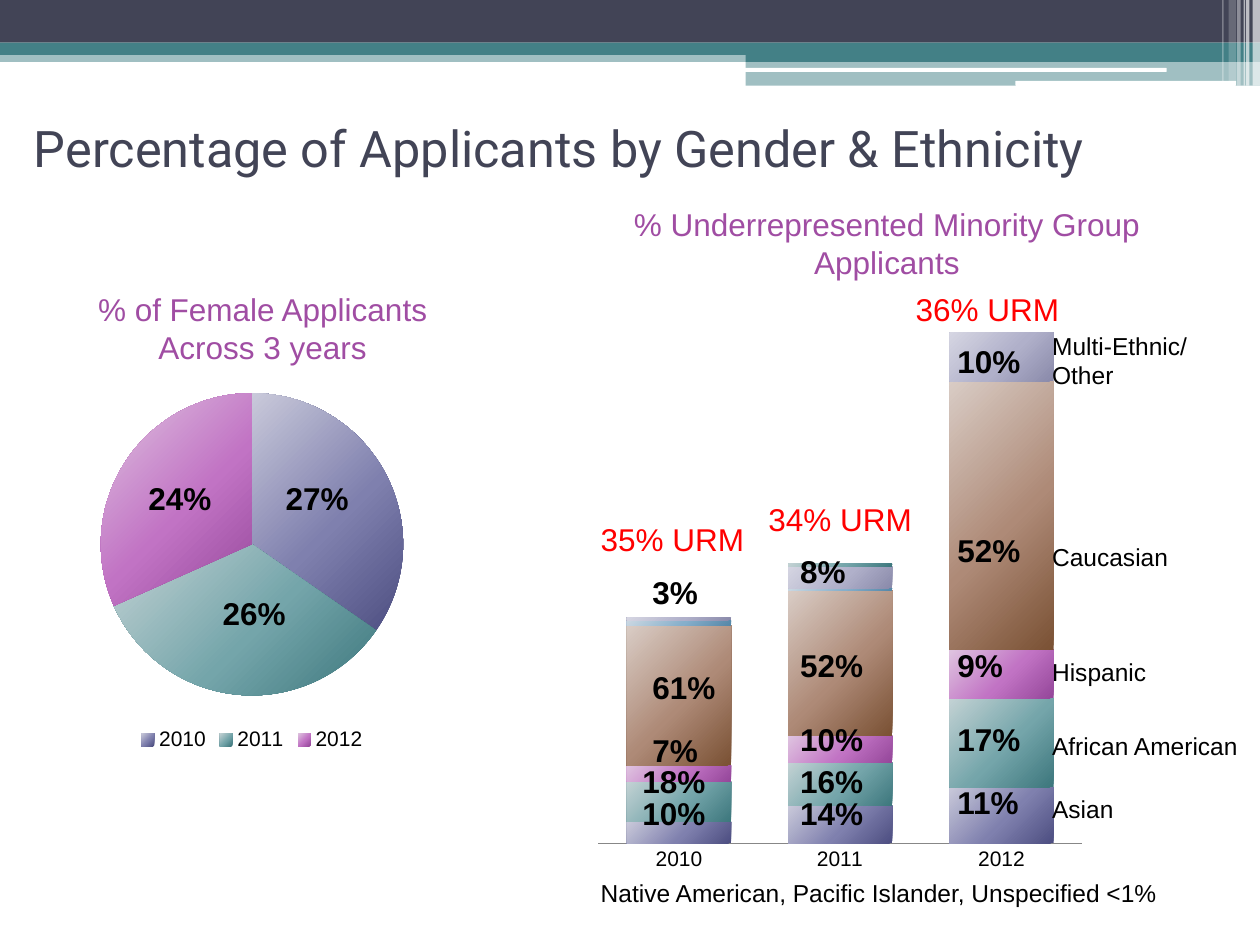
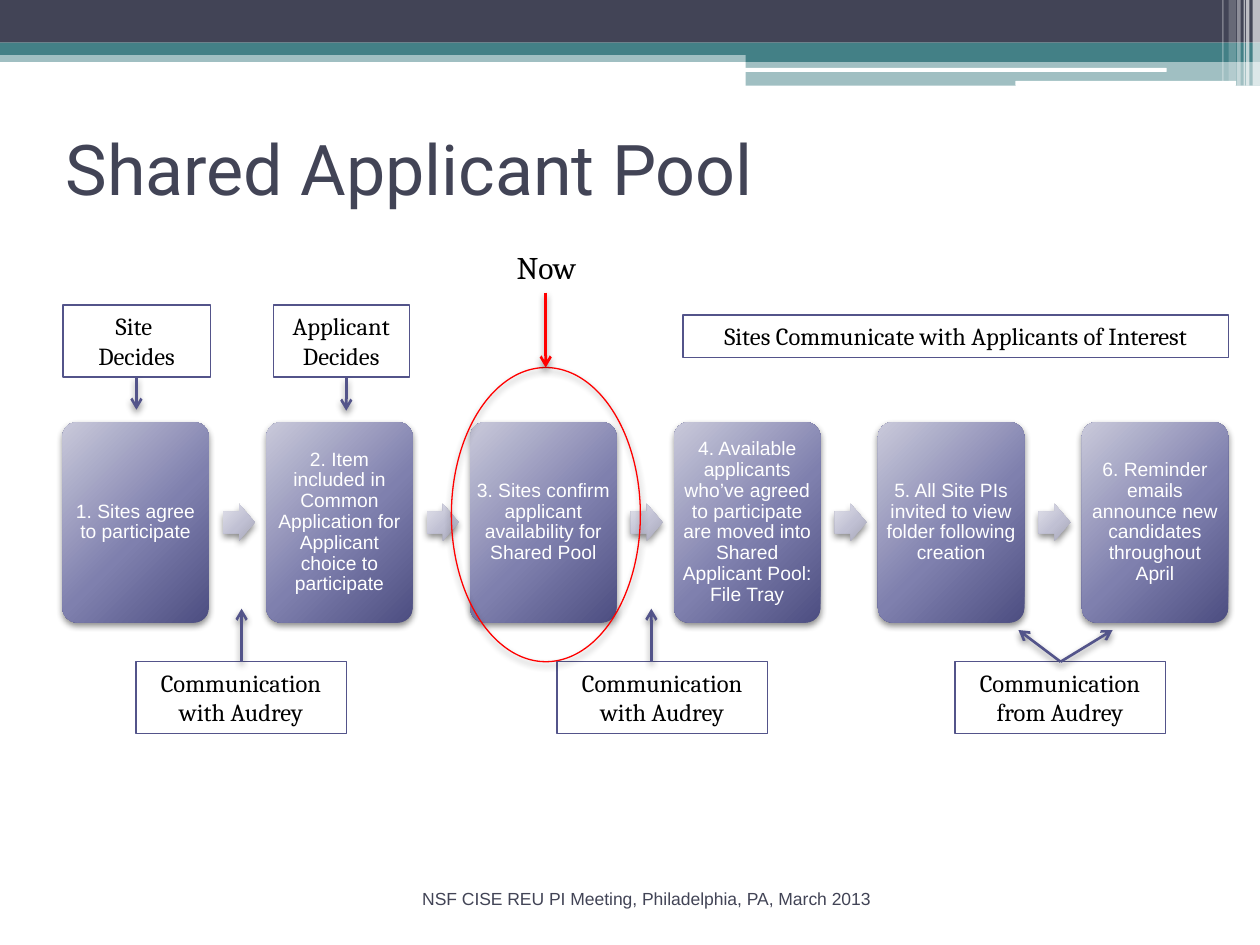
from lxml.etree import SubElement
from pptx import Presentation
from pptx.chart.data import CategoryChartData
from pptx.dml.color import RGBColor
from pptx.enum.chart import XL_CHART_TYPE, XL_LEGEND_POSITION, XL_TICK_LABEL_POSITION, XL_TICK_MARK
from pptx.enum.shapes import MSO_CONNECTOR, MSO_SHAPE
from pptx.enum.text import MSO_ANCHOR, PP_ALIGN
from pptx.oxml import parse_xml
from pptx.oxml.ns import nsdecls, qn
from pptx.util import Cm, Pt

WHITE = RGBColor(0xFF, 0xFF, 0xFF)
BLACK = RGBColor(0x00, 0x00, 0x00)
RED = RGBColor(0xFF, 0x00, 0x00)
GRAY = RGBColor(0x87, 0x87, 0x87)
SLATE = RGBColor(0x42, 0x44, 0x56)
TEAL = RGBColor(0x43, 0x80, 0x86)
INDIGO = RGBColor(0x53, 0x54, 0x8A)
PURPLE = RGBColor(0xA0, 0x4D, 0xA3)

# Gradient stops from light through middle to dark
INDIGO_GRADIENT = ("C9C9DA", "7F80AE", "4D4E81")
PALE_INDIGO_GRADIENT = ("D5D5E2", "B0B0CA", "8A8AAA")
TEAL_GRADIENT = ("C3D2D4", "74A5AA", "3D777D")
PURPLE_GRADIENT = ("DFC4E0", "C173C4", "95479A")
ORANGE_GRADIENT = ("E8CDC0", "DA8F68", "B75D28")
BROWN_GRADIENT = ("D9CCC5", "AE8A77", "7A5134")
BLUE_GRADIENT = ("CBD8E2", "86AFCB", "5587A8")
ARROW_GRADIENT = ("E1E1EA", "C0C0D3", "A7A7B7")

SHADOW = (
    f'<a:effectLst {nsdecls("a")}><a:outerShdw blurRad="50800" dist="25400" dir="5400000" rotWithShape="0">'
    '<a:srgbClr val="000000"><a:alpha val="45000"/></a:srgbClr></a:outerShdw></a:effectLst>'
)


def write_text(shape, text, *, size, font="Arial", color=BLACK, bold=False, align=PP_ALIGN.LEFT,
               anchor=MSO_ANCHOR.TOP, line_spacing=None, inset=None):
    frame = shape.text_frame
    frame.text = text
    frame.word_wrap = True
    frame.vertical_anchor = anchor
    if inset is not None:
        frame.margin_left = frame.margin_right = frame.margin_top = frame.margin_bottom = Cm(inset)
    for paragraph in frame.paragraphs:
        paragraph.alignment = align
        paragraph.line_spacing = line_spacing
        for run in paragraph.runs:
            run.font.size = Pt(size)
            run.font.name = font
            run.font.bold = bold
            run.font.color.rgb = color


def set_gradient(fill, colors):
    fill.background()
    properties = fill._xPr
    stops = "".join(
        f'<a:gs pos="{position}"><a:srgbClr val="{color}"/></a:gs>'
        for position, color in zip((0, 55000, 100000), colors)
    )
    properties.replace(properties.find(qn("a:noFill")), parse_xml(
        f'<a:gradFill {nsdecls("a")} rotWithShape="1"><a:gsLst>{stops}</a:gsLst><a:path path="circle">'
        '<a:fillToRect l="-40000" t="-90000" r="140000" b="190000"/></a:path></a:gradFill>'
    ))


presentation = Presentation()
presentation.slide_width = Cm(25.4)
presentation.slide_height = Cm(19.05)
layout = presentation.slide_layouts[5]
for placeholder in list(layout.placeholders)[1:]:
    placeholder._element.getparent().remove(placeholder._element)

# Slides and their titles
titles = [
    ("Percentage of Applicants by Gender & Ethnicity", 28.8, (0.43, 1.7, 24.56, 2.54)),
    ("Shared Applicant Pool", 40, (1.07, 1.9, 22.86, 2.97)),
]
for text, size, box in titles:
    title = presentation.slides.add_slide(layout).shapes.title
    title.left, title.top, title.width, title.height = map(Cm, box)
    write_text(title, text, size=size, font="Roboto", color=SLATE, anchor=MSO_ANCHOR.MIDDLE)
applicants, pool = presentation.slides

# Shared header bands, moved to the layout
RECTANGLE, ROUNDED = MSO_SHAPE.RECTANGLE, MSO_SHAPE.ROUNDED_RECTANGLE
bands = [
    (RECTANGLE, 0, 1.02, 25.4, 0.23, TEAL, 50),
    (RECTANGLE, 0, 0, 25.4, 0.86, SLATE, 100),
    (RECTANGLE, 0, 0.86, 25.4, 0.25, TEAL, 100),
    (RECTANGLE, 15.03, 1, 10.37, 0.25, TEAL, 100),
    (RECTANGLE, 15.03, 1.25, 10.37, 0.48, TEAL, 50),
    (ROUNDED, 15.01, 1.37, 8.51, 0.08, WHITE, 100),
    (ROUNDED, 20.47, 1.63, 4.45, 0.1, WHITE, 100),
    (RECTANGLE, 25.25, 0, 0.15, 1.73, WHITE, 65),
    (RECTANGLE, 25.12, 0, 0.07, 1.73, WHITE, 65),
    (RECTANGLE, 25.07, 0, 0.03, 1.73, WHITE, 60),
    (RECTANGLE, 24.94, 0, 0.07, 1.73, WHITE, 40),
    (RECTANGLE, 24.77, 0, 0.15, 1.63, WHITE, 20),
    (RECTANGLE, 24.64, 0, 0.03, 1.63, WHITE, 30),
]
for kind, left, top, width, height, color, opacity in bands:
    band = applicants.shapes.add_shape(kind, Cm(left), Cm(top), Cm(width), Cm(height))
    band.shadow.inherit = False
    band.line.fill.background()
    band.fill.solid()
    band.fill.fore_color.rgb = color
    if opacity < 100:
        color_element = band.fill._xPr.find(".//" + qn("a:srgbClr"))
        SubElement(color_element, qn("a:alpha"), val=str(opacity * 1000))
    layout.shapes._spTree.append(band._element)

# Pie chart of female applicants
years = ["2010", "2011", "2012"]
pie_data = CategoryChartData()
pie_data.categories = years
pie_data.add_series("Series 1", (35, 34, 32))
pie_chart = applicants.shapes.add_chart(
    XL_CHART_TYPE.PIE, Cm(-1.27), Cm(7.62), Cm(12.7), Cm(7.62), pie_data).chart
pie_chart.has_legend = True
pie_chart.legend.position = XL_LEGEND_POSITION.BOTTOM
pie_chart.legend.include_in_layout = False
pie_chart.legend.font.size = Pt(12)
pie_chart.legend.font.name = "Arial"
pie_chart.plots[0].vary_by_categories = True
for index, colors in enumerate((INDIGO_GRADIENT, TEAL_GRADIENT, PURPLE_GRADIENT)):
    set_gradient(pie_chart.plots[0].series[0].points[index].format.fill, colors)

# Stacked columns of ethnic groups
ethnic_groups = [
    ((8, 14, 21), INDIGO_GRADIENT),
    ((15, 16, 33), TEAL_GRADIENT),
    ((6, 10, 18), PURPLE_GRADIENT),
    ((0, 0, 0), ORANGE_GRADIENT),
    ((52, 54, 100), BROWN_GRADIENT),
    ((2, 1, 0), BLUE_GRADIENT),
    ((1, 8, 18), PALE_INDIGO_GRADIENT),
    ((0, 1, 0), TEAL_GRADIENT),
]
column_data = CategoryChartData()
column_data.categories = years
for number, (values, colors) in enumerate(ethnic_groups, start=1):
    column_data.add_series(f"Series {number}", values)
column_chart = applicants.shapes.add_chart(
    XL_CHART_TYPE.COLUMN_STACKED, Cm(11.86), Cm(4.88), Cm(10.16), Cm(12.9), column_data).chart
column_chart.has_legend = False
plot = column_chart.plots[0]
plot.gap_width = 55
plot.overlap = 100
plot.vary_by_categories = False
for series, (values, colors) in zip(plot.series, ethnic_groups):
    series.invert_if_negative = False
    set_gradient(series.format.fill, colors)
value_axis = column_chart.value_axis
value_axis.visible = False
value_axis.has_major_gridlines = False
value_axis.minimum_scale = 0
value_axis.maximum_scale = 200
category_axis = column_chart.category_axis
category_axis.major_tick_mark = XL_TICK_MARK.NONE
category_axis.tick_label_position = XL_TICK_LABEL_POSITION.NEXT_TO_AXIS
category_axis.tick_labels.offset = 0
category_axis.tick_labels.font.size = Pt(12)
category_axis.tick_labels.font.name = "Arial"
category_axis.format.line.color.rgb = GRAY

# Chart fonts and plot areas
plot_areas = [(pie_chart, (0.26, 0.04, 0.48, 0.8)), (column_chart, (0.02, 0.1, 0.96, 0.84))]
for chart, area in plot_areas:
    chart.has_title = False
    chart.font.size = Pt(10)
    chart.font.name = "Cambria"
    chart.font.color.rgb = BLACK
    plot_area = chart._chartSpace.find(".//" + qn("c:plotArea"))
    for old_layout in plot_area.findall(qn("c:layout")):
        plot_area.remove(old_layout)
    sizes = "".join(f'<c:{name} val="{value}"/>' for name, value in zip("xywh", area))
    plot_area.insert(0, parse_xml(
        f'<c:layout {nsdecls("c")}><c:manualLayout><c:layoutTarget val="inner"/>'
        f'<c:xMode val="edge"/><c:yMode val="edge"/>{sizes}</c:manualLayout></c:layout>'
    ))

# Chart headings
headings = [
    ("% of Female Applicants\nAcross 3 years", 1.7, 5.72, 7.19),
    ("% Underrepresented Minority Group Applicants", 11.43, 4.01, 12.9),
]
for text, left, top, width in headings:
    heading = applicants.shapes.add_textbox(Cm(left), Cm(top), Cm(width), Cm(1.8))
    write_text(heading, text, size=18, color=PURPLE, align=PP_ALIGN.CENTER)

# Percentages, by left edge
percentages = {
    2.74: [("24%", 9.53)],
    4.24: [("26%", 11.86)],
    5.51: [("27%", 9.53)],
    12.7: [("18%", 15.24), ("10%", 15.88)],
    12.9: [("3%", 11.43), ("61%", 13.34), ("7%", 14.61)],
    15.88: [("8%", 11), ("52%", 12.9), ("10%", 14.4), ("16%", 15.24), ("14%", 15.88)],
    19.05: [("10%", 6.78), ("52%", 10.59), ("9%", 12.9), ("17%", 14.4), ("11%", 15.67)],
}
for left, labels in percentages.items():
    for text, top in labels:
        label = applicants.shapes.add_textbox(Cm(left), Cm(top), Cm(1.91), Cm(1.02))
        write_text(label, text, size=18, bold=True)

# Group names, note and minority totals
captions = [
    ("Asian", 20.96, 15.88, 4.01, 14, BLACK),
    ("African American", 20.96, 14.61, 4.45, 14, BLACK),
    ("Hispanic", 20.96, 13.13, 4.45, 14, BLACK),
    ("Caucasian", 20.96, 10.8, 4.45, 14, BLACK),
    ("Multi-Ethnic/Other", 20.96, 6.55, 4.45, 14, BLACK),
    ("Native American, Pacific Islander, Unspecified <1%", 11.86, 17.58, 13.34, 14, BLACK),
    ("35% URM", 11.86, 10.36, 3.61, 18, RED),
    ("34% URM", 15.24, 9.96, 3.61, 18, RED),
    ("36% URM", 18.21, 5.72, 3.61, 18, RED),
]
for text, left, top, width, size, color in captions:
    caption = applicants.shapes.add_textbox(Cm(left), Cm(top), Cm(width), Cm(0.9))
    write_text(caption, text, size=size, color=color)

# Process steps with block arrows between them
steps = [
    "1. Sites agree to participate",
    "2. Item included in Common Application for Applicant choice to participate",
    "3. Sites confirm applicant availability for Shared Pool",
    "4. Available applicants who’ve agreed to participate are moved into Shared Applicant Pool: File Tray",
    "5. All Site PIs invited to view folder following creation",
    "6. Reminder emails announce new candidates throughout April",
]
for index, text in enumerate(steps):
    left = 1.26 + index * 4.11
    step = pool.shapes.add_shape(ROUNDED, Cm(left), Cm(8.51), Cm(2.95), Cm(4.04))
    step.adjustments[0] = 0.1
    write_text(step, text, size=11, color=WHITE, align=PP_ALIGN.CENTER,
               anchor=MSO_ANCHOR.MIDDLE, line_spacing=0.9, inset=0.04)
    blocks = [(step, INDIGO_GRADIENT)]
    if index < len(steps) - 1:
        arrow = pool.shapes.add_shape(MSO_SHAPE.RIGHT_ARROW, Cm(left + 3.24), Cm(10.16), Cm(0.64), Cm(0.74))
        arrow.adjustments[0] = 0.6
        blocks.append((arrow, ARROW_GRADIENT))
    for block, colors in blocks:
        set_gradient(block.fill, colors)
        block.line.fill.background()
        block._element.spPr.append(parse_xml(SHADOW))

# Outlined notes
notes = [
    ("Communication with Audrey", 2.74, 13.34, 4.24, 1.45),
    ("Communication with Audrey", 11.23, 13.34, 4.24, 1.45),
    ("Communication from Audrey", 19.25, 13.34, 4.24, 1.45),
    ("Site \nDecides", 1.27, 6.15, 2.97, 1.45),
    ("Applicant\nDecides", 5.51, 6.15, 2.74, 1.45),
    ("Sites Communicate with Applicants of Interest", 13.77, 6.35, 11, 0.86),
]
for text, left, top, width, height in notes:
    note = pool.shapes.add_shape(RECTANGLE, Cm(left), Cm(top), Cm(width), Cm(height))
    note.shadow.inherit = False
    note.fill.background()
    note.line.color.rgb = INDIGO
    note.line.width = Pt(0.75)
    write_text(note, text, size=14, font="Cambria", align=PP_ALIGN.CENTER)

# Current step marker
marker = pool.shapes.add_shape(MSO_SHAPE.OVAL, Cm(9.1), Cm(7.41), Cm(3.81), Cm(5.93))
marker.fill.background()
marker.line.color.rgb = RED
marker.line.width = Pt(0.75)
marker._element.spPr.append(parse_xml(SHADOW))
now = pool.shapes.add_textbox(Cm(9.53), Cm(4.88), Cm(2.97), Cm(1.02))
write_text(now, "Now", size=18, font="Cambria", align=PP_ALIGN.CENTER)

# Arrows from the notes
arrows = [
    (4.87, 13.34, 4.87, 12.27, INDIGO),
    (13.13, 13.34, 13.13, 12.27, INDIGO),
    (21.38, 13.34, 20.53, 12.7, INDIGO),
    (21.38, 13.34, 22.43, 12.7, INDIGO),
    (2.75, 7.6, 2.75, 8.26, INDIGO),
    (6.98, 7.62, 6.98, 8.28, INDIGO),
    (11, 5.9, 11, 7.41, RED),
]
for start_x, start_y, end_x, end_y, color in arrows:
    connector = pool.shapes.add_connector(
        MSO_CONNECTOR.STRAIGHT, Cm(start_x), Cm(start_y), Cm(end_x), Cm(end_y))
    connector.line.color.rgb = color
    connector.line.width = Pt(1.5)
    SubElement(connector.line._get_or_add_ln(), qn("a:tailEnd"), type="arrow")
    connector._element.spPr.append(parse_xml(SHADOW))

# Footer
footer = pool.shapes.add_textbox(Cm(6.78), Cm(17.78), Cm(12.5), Cm(1.27))
write_text(footer, "NSF CISE REU PI Meeting, Philadelphia, PA, March 2013",
           size=10, color=SLATE, align=PP_ALIGN.CENTER)

presentation.save("out.pptx")
